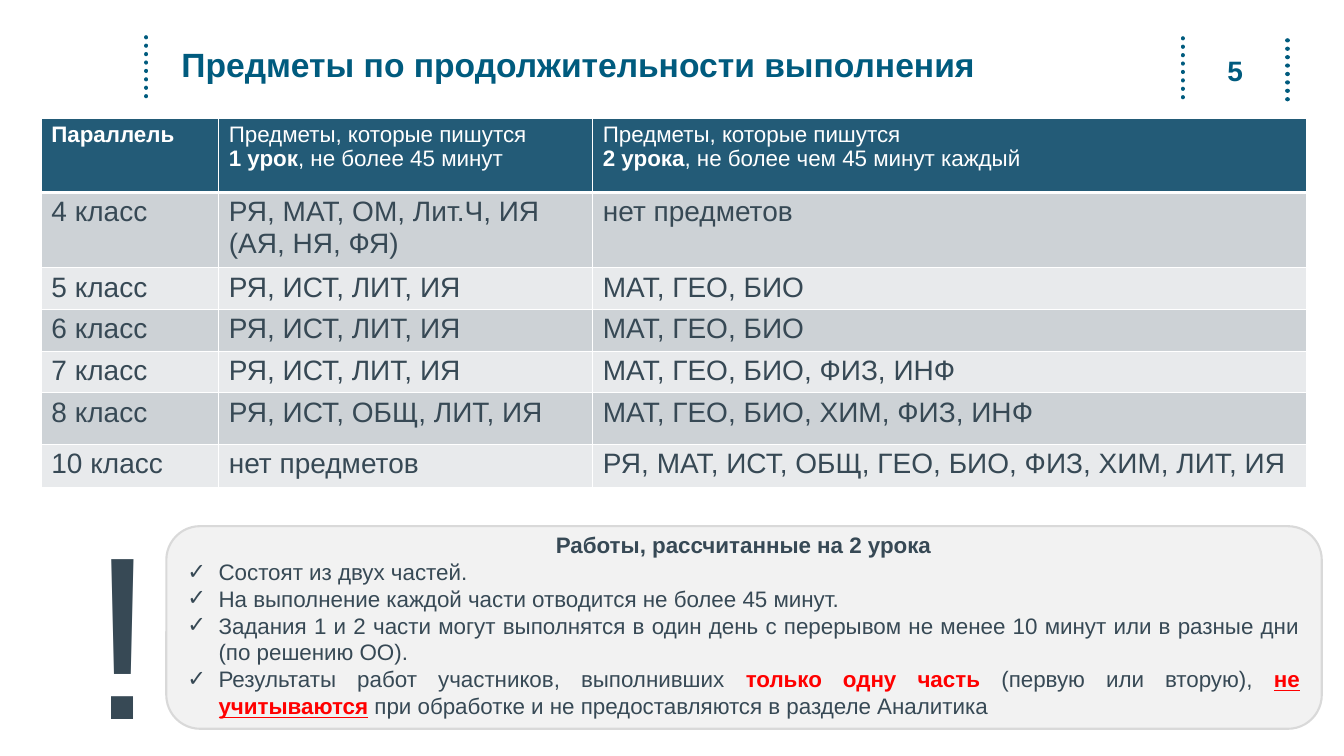
from dataclasses import dataclass
from lxml import etree
from pptx import Presentation
from pptx import util as u
from pptx.dml import color as dml
from pptx.enum import dml as lines, shapes, text
from pptx.oxml import ns


@dataclass(frozen=True)
class Theme:
    font: str = "Arial"
    teal: str = "005B7E"
    head: str = "235B77"
    ink: str = "374955"
    white: str = "FFFFFF"
    red: str = "FF0000"
    dark: str = "CDD2D6"
    light: str = "E8EAEC"
    panel: str = "F2F2F2"
    edge: str = "D9D9D9"
    title: int = 24
    body: int = 20
    small: int = 16
    mark: int = 166


@dataclass(frozen=True)
class Part:
    words: str
    color: str
    bold: bool = False
    under: bool = False


@dataclass(frozen=True)
class Rule:
    x: float
    top: float
    end: float


@dataclass(frozen=True)
class Row:
    height: float
    cells: tuple[str, str, str]


T = Theme()
ALIGN = text.PP_ALIGN

RULES = [Rule(1.45, 0.37, 0.99), Rule(11.73, 0.38, 0.99), Rule(12.77, 0.4, 0.99)]
WIDTHS = [1.76, 3.71, 7.08]
HEADS = [
    [[Part("Параллель", T.white, True)]],
    [[Part("Предметы, которые пишутся", T.white)],
     [Part("1 урок", T.white, True), Part(", не более 45 минут", T.white)]],
    [[Part("Предметы, которые пишутся", T.white)],
     [Part("2 урока", T.white, True),
      Part(", не более чем 45 минут каждый", T.white)]],
]
ROWS = [
    Row(0.72, ("4 класс", "РЯ, МАТ, ОМ, Лит.Ч, ИЯ (АЯ, НЯ, ФЯ)", "нет предметов")),
    Row(0.41, ("5 класс", "РЯ, ИСТ, ЛИТ, ИЯ", "МАТ, ГЕО, БИО")),
    Row(0.41, ("6 класс", "РЯ, ИСТ, ЛИТ, ИЯ", "МАТ, ГЕО, БИО")),
    Row(0.41, ("7 класс", "РЯ, ИСТ, ЛИТ, ИЯ", "МАТ, ГЕО, БИО, ФИЗ, ИНФ")),
    Row(0.51, ("8 класс", "РЯ, ИСТ, ОБЩ, ЛИТ, ИЯ", "МАТ, ГЕО, БИО, ХИМ, ФИЗ, ИНФ")),
    Row(0.43, ("10 класс", "нет предметов",
               "РЯ, МАТ, ИСТ, ОБЩ, ГЕО, БИО, ФИЗ, ХИМ, ЛИТ, ИЯ")),
]
NOTES = [
    [Part("Работы, рассчитанные на 2 урока", T.ink, True)],
    [Part("Состоят из двух частей.", T.ink)],
    [Part("На выполнение каждой части отводится не более 45 минут.", T.ink)],
    [Part("Задания 1 и 2 части могут выполнятся в один день с перерывом "
          "не менее 10 минут или в разные дни (по решению ОО).", T.ink)],
    [Part("Результаты работ участников, выполнивших ", T.ink),
     Part("только одну часть ", T.red, True),
     Part("(первую или вторую), ", T.ink),
     Part("не учитываются", T.red, True, True),
     Part(" при обработке и не предоставляются в разделе Аналитика", T.ink)],
]


def rgb(code: str) -> dml.RGBColor:
    return dml.RGBColor.from_string(code)


def box(left: float, top: float, width: float, height: float) -> list[u.Length]:
    return [u.Inches(v) for v in (left, top, width, height)]


def write(frame, paras: list[list[Part]], size: int, align=ALIGN.LEFT) -> None:
    for i, parts in enumerate(paras):
        para = frame.paragraphs[0] if i == 0 else frame.add_paragraph()
        para.alignment = align
        for part in parts:
            run = para.add_run()
            run.text = part.words
            font = run.font
            font.name, font.size = T.font, u.Pt(size)
            font.bold, font.underline = part.bold, part.under
            font.color.rgb = rgb(part.color)


def label(slide, place: list[u.Length], paras: list[list[Part]], size: int,
          align=ALIGN.LEFT, wrap: bool = True):
    frame = slide.shapes.add_textbox(*place).text_frame
    frame.word_wrap = wrap
    write(frame, paras, size, align)
    return frame


def draw_rule(slide, rule: Rule) -> None:
    x = u.Inches(rule.x)
    link = slide.shapes.add_connector(
        shapes.MSO_CONNECTOR.STRAIGHT, x, u.Inches(rule.top), x, u.Inches(rule.end))
    link.line.color.rgb = rgb(T.teal)
    link.line.width = u.Pt(3)
    link.line.dash_style = lines.MSO_LINE.ROUND_DOT
    props = link._element.spPr
    props.find(ns.qn("a:ln")).set("cap", "rnd")
    etree.SubElement(props, ns.qn("a:effectLst"))


def fill_cell(cell, paras: list[list[Part]], size: int, color: str,
              above: int, below: int) -> None:
    write(cell.text_frame, paras, size)
    cell.margin_top = cell.margin_bottom = u.Inches(0.04)
    cell.fill.solid()
    cell.fill.fore_color.rgb = rgb(color)
    props = cell._tc.get_or_add_tcPr()
    sides = {"lnL": 1, "lnR": 1, "lnT": above, "lnB": below}
    for i, (side, width) in enumerate(sides.items()):
        edge = etree.Element(ns.qn("a:" + side), w=str(u.Pt(width)))
        solid = etree.SubElement(edge, ns.qn("a:solidFill"))
        etree.SubElement(solid, ns.qn("a:srgbClr"), val=T.white)
        props.insert(i, edge)


def draw_table(slide) -> None:
    tall = [0.74] + [row.height for row in ROWS]
    table = slide.shapes.add_table(
        len(tall), len(WIDTHS), *box(0.41, 1.17, sum(WIDTHS), sum(tall))).table
    for col, width in zip(table.columns, WIDTHS):
        col.width = u.Inches(width)
    for row, height in zip(table.rows, tall):
        row.height = u.Inches(height)
    for c, paras in enumerate(HEADS):
        fill_cell(table.cell(0, c), paras, T.small, T.head, 1, 3)
    for r, row in enumerate(ROWS, 1):
        shade = T.dark if r % 2 else T.light
        for c, words in enumerate(row.cells):
            fill_cell(table.cell(r, c), [[Part(words, T.ink)]], T.body, shade,
                      3 if r == 1 else 1, 1)


def draw_notes(slide) -> None:
    panel = slide.shapes.add_shape(
        shapes.MSO_SHAPE.ROUNDED_RECTANGLE, *box(1.65, 5.22, 11.46, 2.01))
    panel.shadow.inherit = False
    panel.fill.solid()
    panel.fill.fore_color.rgb = rgb(T.panel)
    panel.line.color.rgb = rgb(T.edge)
    panel.line.width = u.Pt(1.5)
    frame = label(slide, box(1.76, 5.22, 11.23, 2.03), NOTES, T.small, ALIGN.JUSTIFY)
    first, *rest = frame.paragraphs
    first.alignment = ALIGN.CENTER
    for para in rest:
        props = para._p.get_or_add_pPr()
        props.set("marL", str(u.Inches(0.31)))
        props.set("indent", str(u.Inches(-0.31)))
        etree.SubElement(props, ns.qn("a:buFont"), typeface=T.font)
        etree.SubElement(props, ns.qn("a:buChar"), char="✓")


def main() -> None:
    deck = Presentation()
    deck.slide_width, deck.slide_height = u.Inches(13.33), u.Inches(7.5)
    slide = deck.slides.add_slide(deck.slide_layouts[5])
    for rule in RULES:
        draw_rule(slide, rule)
    page = label(slide, box(11.98, 0.43, 0.54, 0.53), [[Part("5", T.teal, True)]],
                 T.body, ALIGN.CENTER)
    page.vertical_anchor = text.MSO_ANCHOR.MIDDLE
    title = slide.shapes.title
    title.left, title.top, title.width, title.height = box(1.7, 0.37, 9.77, 0.58)
    frame = title.text_frame
    frame.auto_size = text.MSO_AUTO_SIZE.NONE
    frame.vertical_anchor = text.MSO_ANCHOR.MIDDLE
    write(frame, [[Part("Предметы по продолжительности выполнения", T.teal, True)]],
          T.title)
    frame.paragraphs[0].line_spacing = 0.9
    draw_table(slide)
    draw_notes(slide)
    label(slide, box(0.8, 4.78, 0.85, 2.89), [[Part("!", T.ink)]], T.mark, wrap=False)
    deck.save("out.pptx")


if __name__ == "__main__":
    main()
